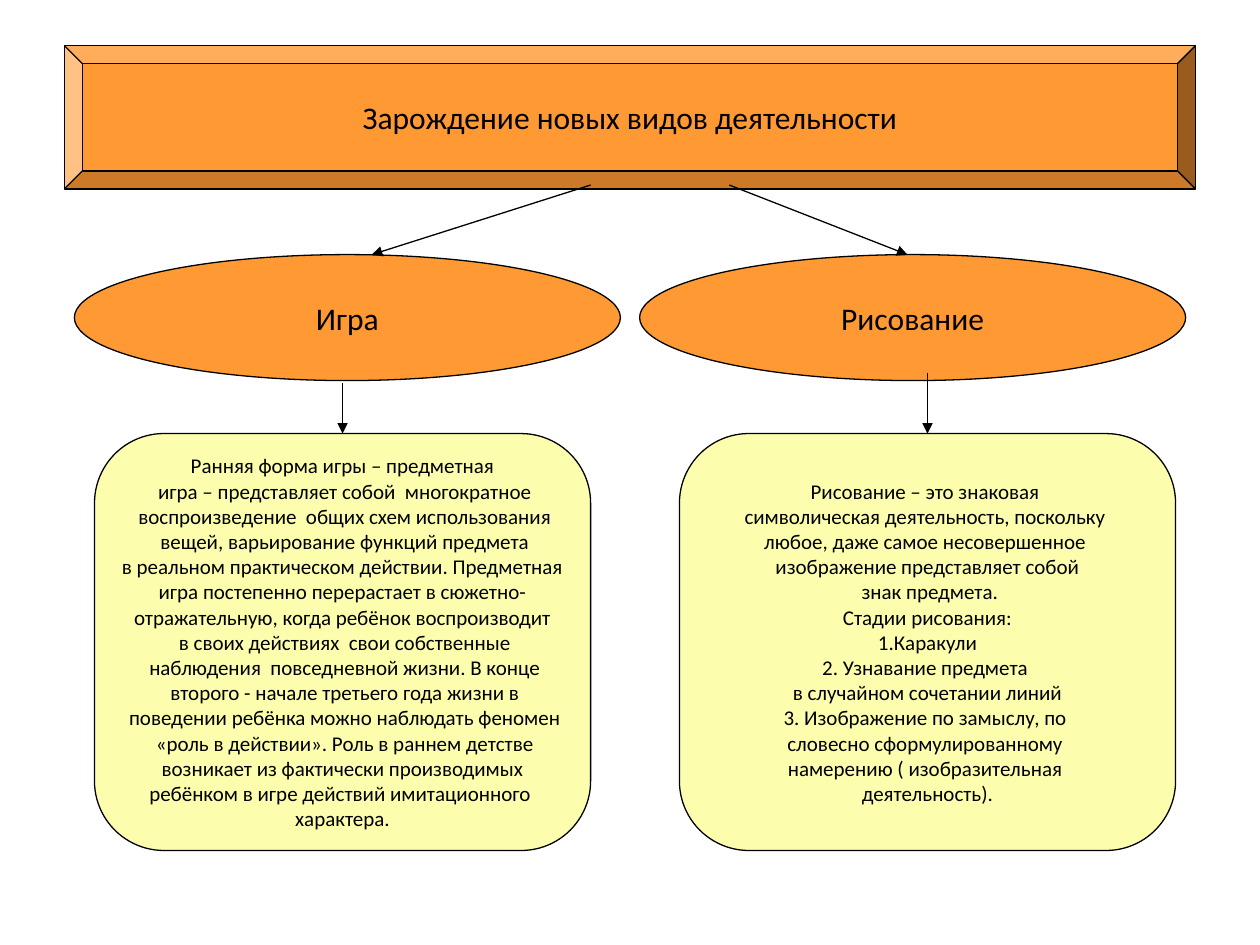
import pptx
import pptx.dml.color
import pptx.enum.shapes
import pptx.enum.text
import pptx.oxml
import pptx.oxml.ns
import pptx.util
from lxml import etree

Pt = pptx.util.Pt
Kind = pptx.enum.shapes.MSO_SHAPE

GAME = """Ранняя форма игры – предметная
 игра – представляет собой  многократное
 воспроизведение  общих схем использования
 вещей, варьирование функций предмета
 в реальном практическом действии. Предметная 
игра постепенно перерастает в сюжетно-
отражательную, когда ребёнок воспроизводит
 в своих действиях  свои собственные
 наблюдения  повседневной жизни. В конце
 второго - начале третьего года жизни в
 поведении ребёнка можно наблюдать феномен
 «роль в действии». Роль в раннем детстве
возникает из фактически производимых
ребёнком в игре действий имитационного 
характера."""

DRAWING = """Рисование – это знаковая 
символическая деятельность, поскольку 
любое, даже самое несовершенное 
изображение представляет собой
 знак предмета.
Стадии рисования:
1.Каракули
2. Узнавание предмета 
в случайном сочетании линий
3. Изображение по замыслу, по 
словесно сформулированному 
намерению ( изобразительная 
деятельность)."""


def color(code):
    return pptx.dml.color.RGBColor.from_string(code)


class Board:
    """Holds the slide and the style its elements share."""
    font = "Calibri"
    ink = "000000"
    orange = "FF9933"
    cream = "FCFEAE"
    stroke = 0.75

    def __init__(self, slide):
        self.slide = slide

    def pen(self, line):
        line.color.rgb = color(self.ink)
        line.width = Pt(self.stroke)

    def shape(self, kind, left, top, width, height, fill, text, size):
        item = self.slide.shapes.add_shape(
            kind, Pt(left), Pt(top), Pt(width), Pt(height))
        item.shadow.inherit = False
        item.fill.solid()
        item.fill.fore_color.rgb = color(fill)
        self.pen(item.line)
        frame = item.text_frame
        frame.word_wrap = False
        frame.vertical_anchor = pptx.enum.text.MSO_ANCHOR.MIDDLE
        for i, row in enumerate(text.split("\n")):
            para = frame.add_paragraph() if i else frame.paragraphs[0]
            para.add_run().text = row
            para.alignment = pptx.enum.text.PP_ALIGN.CENTER
            para.font.name = self.font
            para.font.size = Pt(size)
            para.font.color.rgb = color(self.ink)
        return item

    def title(self, left, top, width, height, text):
        return self.shape(Kind.BEVEL, left, top, width, height,
                          self.orange, text, 18)

    def oval(self, left, text):
        return self.shape(Kind.OVAL, left, 145.5, 312, 72,
                          self.orange, text, 18)

    def card(self, left, text):
        return self.shape(Kind.ROUNDED_RECTANGLE, left, 247.75, 283.5, 238.25,
                          self.cream, text, 12)

    def arrow(self, x1, y1, x2, y2, goal=None):
        """Draw an arrow; with a goal, join its head to the goal's top."""
        link = self.slide.shapes.add_connector(
            pptx.enum.shapes.MSO_CONNECTOR.STRAIGHT,
            Pt(x1), Pt(y1), Pt(x2), Pt(y2))
        if goal is not None:
            link.end_connect(goal, 0)
        self.pen(link.line)
        tag = pptx.oxml.ns.qn
        etree.SubElement(link.line._get_or_add_ln(), tag("a:tailEnd"),
                         type="triangle")
        etree.SubElement(link._element.spPr, tag("a:effectLst"))


def main():
    deck = pptx.Presentation()
    deck.slide_width, deck.slide_height = Pt(720), Pt(540)
    board = Board(deck.slides.add_slide(deck.slide_layouts[6]))

    board.title(36.75, 26, 646.5, 82, "Зарождение новых видов деятельности")
    board.oval(42.5, "Игра")
    board.oval(365.5, "Рисование")
    board.arrow(337.5, 105.75, 212.5, 145.5)
    board.arrow(416.75, 105.75, 518.5, 145.5)

    for left, text, start in ((54, GAME, 219), (388.25, DRAWING, 213)):
        card = board.card(left, text)
        mid = left + 283.5 / 2
        board.arrow(mid, start, mid, 247.75, card)

    deck.save("out.pptx")


if __name__ == "__main__":
    main()
